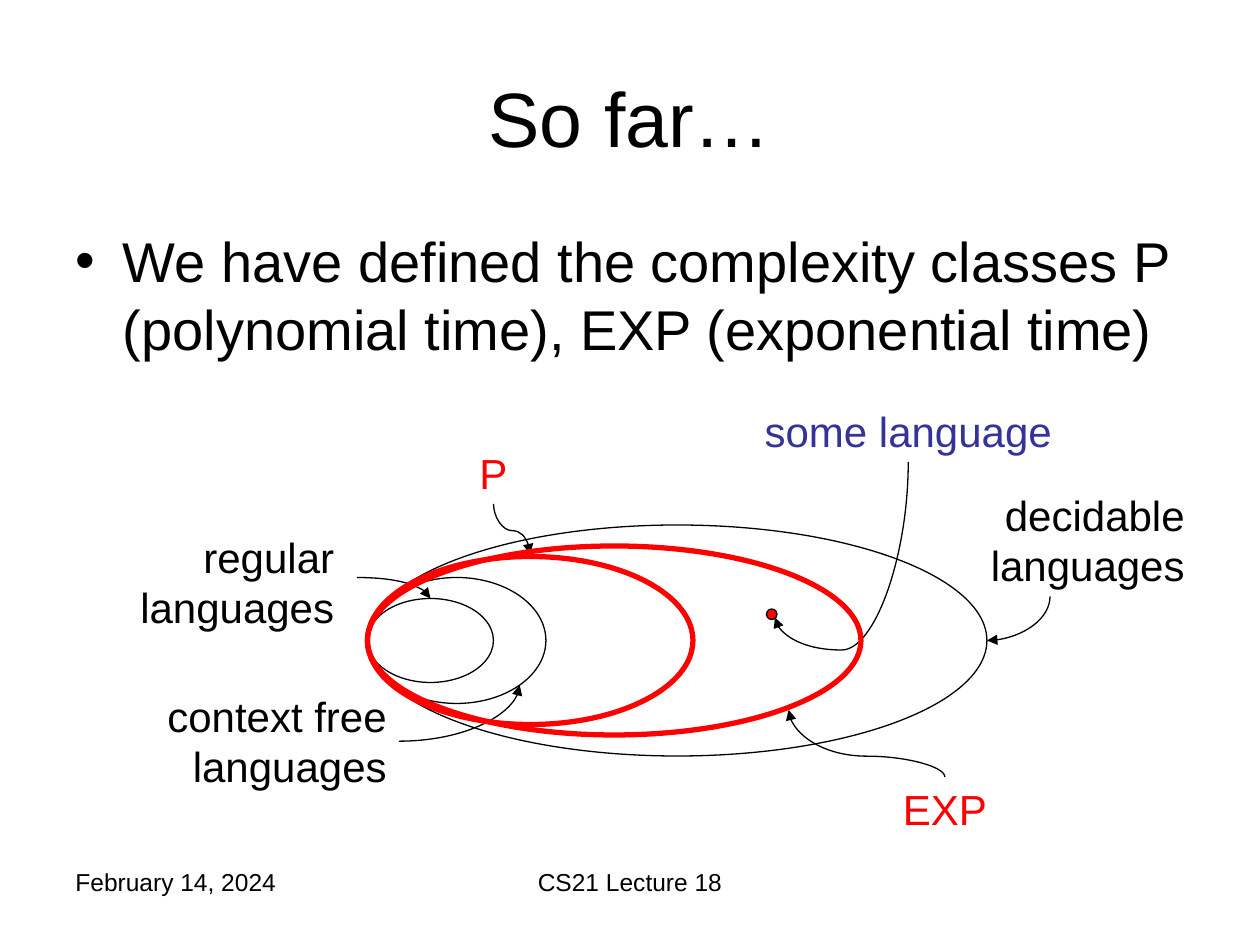
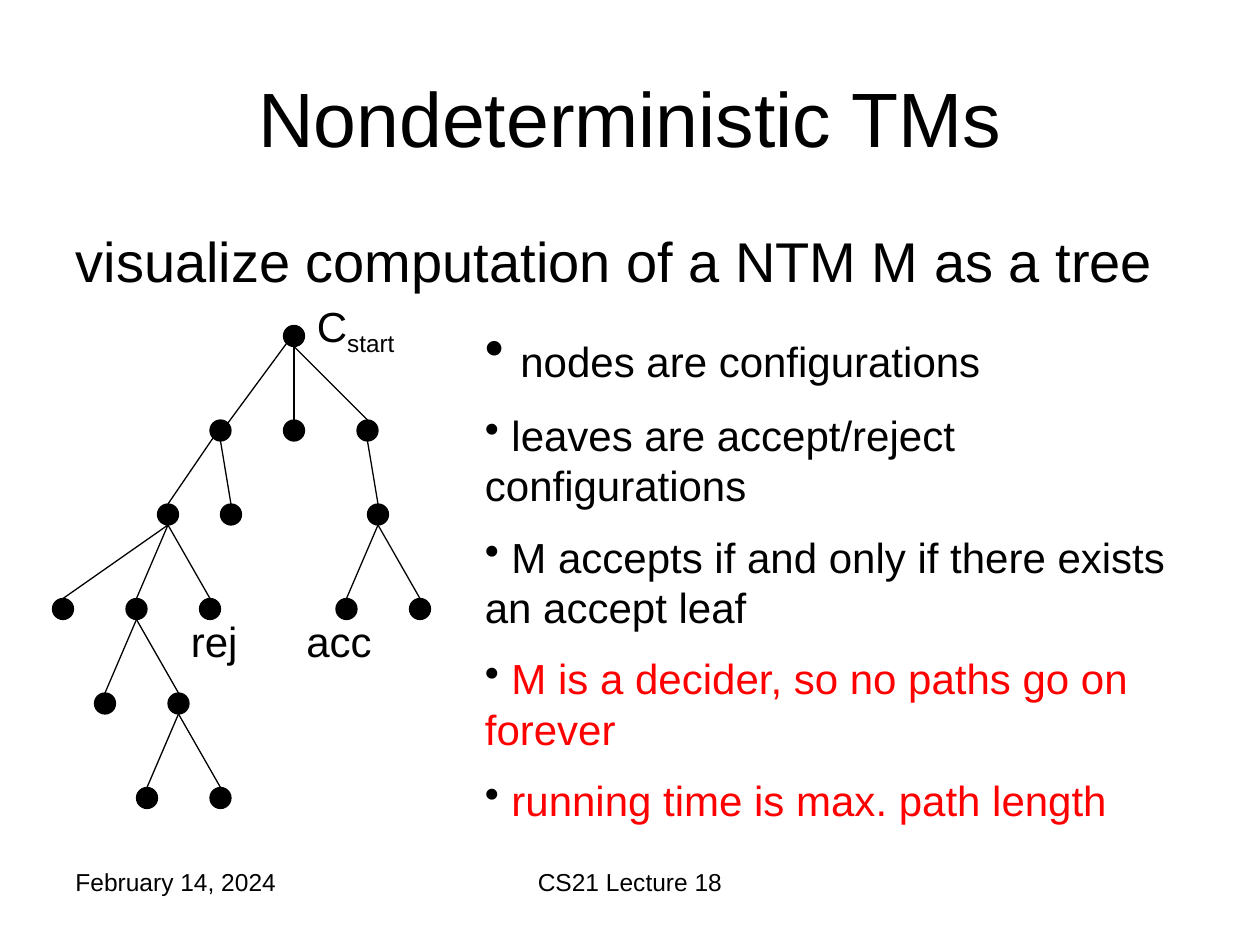
"""Build two lecture slides: language classes and nondeterministic machines."""
from dataclasses import dataclass
from math import cos, radians, sin

from lxml.etree import SubElement
from pptx import Presentation
from pptx.dml.color import RGBColor
from pptx.enum.shapes import MSO_CONNECTOR, MSO_SHAPE
from pptx.enum.text import MSO_ANCHOR, MSO_AUTO_SIZE, PP_ALIGN
from pptx.oxml.ns import qn
from pptx.util import Pt


@dataclass(frozen=True)
class Theme:
    font: str = "Arial"
    black: RGBColor = RGBColor(0, 0, 0)
    red: RGBColor = RGBColor(255, 0, 0)
    blue: RGBColor = RGBColor(0x33, 0x33, 0x99)
    title: int = 44
    body: int = 32
    label: int = 24
    foot: int = 14
    thin: float = 0.75
    thick: float = 3
    gap: int = 12


T = Theme()
LEFT, CENTER, RIGHT = PP_ALIGN.LEFT, PP_ALIGN.CENTER, PP_ALIGN.RIGHT

FOOTS = [
    ("February 14, 2024", (36, 492, 168, 37.4), LEFT),
    ("CS21 Lecture 18", (246, 492, 228, 37.4), CENTER),
]

SETS_X, SETS_Y = 210, 366
OUTER = [(354, 132), (102, 72), (72, 48)]
TIMED = [(282, 108), (186, 96)]
MEMBER = (441, 351)
LABELS = [
    ("regular languages", (66, 300, 132, 64.8), RIGHT, T.black),
    ("context free languages", (60, 391, 168, 64.8), RIGHT, T.black),
    ("decidable languages", (516, 276, 168, 64.8), RIGHT, T.black),
    ("P", (252, 252, 60, 36), CENTER, T.red),
    ("some language", (414, 228, 210, 36), CENTER, T.blue),
    ("EXP", (498, 444, 84, 36), CENTER, T.red),
]
ACROSS = [((204, 330), (246, 342)), ((228, 423.6), (297, 391.5))]
UPRIGHT = [
    ((600, 340.8), (564, 366), None),
    ((282, 288), (303, 316.8), 0.53),
    ((519, 264), (442.8, 352.8), 1.21),
    ((540, 444), (450.7, 405.6), 0.31),
]

LEVELS = [192, 246, 294, 348, 402, 456]
DOT = 12
NODES = {
    "start": (168, 0),
    "a": (126, 1), "b": (168, 1), "c": (210, 1),
    "aa": (96, 2), "ab": (132, 2), "ca": (216, 2),
    "aaa": (36, 3), "aab": (78, 3), "rej": (120, 3),
    "acc": (198, 3), "cab": (240, 3),
    "d": (60, 4), "e": (102, 4),
    "ea": (84, 5), "eb": (126, 5),
}
KIDS = {
    "start": ["a", "b", "c"], "a": ["aa", "ab"], "c": ["ca"],
    "aa": ["aaa", "aab", "rej"], "ca": ["acc", "cab"],
    "aab": ["d", "e"], "e": ["ea", "eb"],
}
ANGLES = {("start", "a"): (135, -45), ("a", "aa"): (135, -90)}
MARKS = [("acc", (168, 348, 90, 36)), ("rej", (102, 348, 90, 36))]
POINTS = [
    ("nodes are configurations", T.black),
    ("leaves are accept/reject configurations", T.black),
    ("M accepts if and only if there exists an accept leaf", T.black),
    ("M is a decider, so no paths go on forever", T.red),
    ("running time is max. path length", T.red),
]


def place(shape, box):
    shape.left, shape.top, shape.width, shape.height = map(Pt, box)


def style(font, size, color=T.black):
    font.name, font.size = T.font, Pt(size)
    font.color.rgb = color


def fill(shape, text, size):
    frame = shape.text_frame
    frame.text = text
    frame.auto_size = MSO_AUTO_SIZE.NONE
    style(frame.paragraphs[0].font, size)
    return frame


def write(slide, text, box, align=LEFT, color=T.black, size=T.label):
    frame = slide.shapes.add_textbox(*map(Pt, box)).text_frame
    frame.word_wrap = True
    para = frame.paragraphs[0]
    para.text, para.alignment = text, align
    style(para.font, size, color)
    return frame


def oval(slide, box, color=T.black, line=T.thin, inside=None):
    shape = slide.shapes.add_shape(MSO_SHAPE.OVAL, *map(Pt, box))
    shape.shadow.inherit = False
    shape.line.color.rgb, shape.line.width = color, Pt(line)
    if inside is None:
        shape.fill.background()
    else:
        shape.fill.solid()
        shape.fill.fore_color.rgb = inside


def disc(slide, x, y, size, color):
    oval(slide, (x - size / 2, y - size / 2, size, size), inside=color)


def link(slide, start, end, kind=MSO_CONNECTOR.STRAIGHT):
    line = slide.shapes.add_connector(kind, *map(Pt, (*start, *end)))
    line.line.color.rgb, line.line.width = T.black, Pt(T.thin)
    SubElement(line._element.spPr, qn("a:effectLst"))
    return line


def curve(slide, start, end, bend=None, turn=0):
    line = link(slide, start, end, MSO_CONNECTOR.CURVE)
    props = line._element.spPr
    if turn:
        props.find(qn("a:xfrm")).set("rot", str(turn * 60000))
    shape = props.find(qn("a:prstGeom"))
    if bend is None:
        shape.set("prst", "curvedConnector2")
    else:
        SubElement(shape.find(qn("a:avLst")), qn("a:gd"),
                   name="adj1", fmla=f"val {round(bend * 100000)}")
    SubElement(props.find(qn("a:ln")), qn("a:tailEnd"), type="triangle")


def drop(slide, start, end, bend):
    (x1, y1), (x2, y2) = start, end
    x, y = (x1 + x2) / 2, (y1 + y2) / 2
    wide, high = abs(y2 - y1) / 2, abs(x2 - x1) / 2
    if (x2 < x1) == (y2 < y1):
        wide = -wide
    turn = 90 if x2 < x1 else 270
    curve(slide, (x - wide, y - high), (x + wide, y + high), bend, turn)


def page(deck, title, body, high):
    slide = deck.slides.add_slide(deck.slide_layouts[1])
    head, main = slide.placeholders
    place(head, (36, 21.6, 648, 90))
    frame = fill(head, title, T.title)
    frame.vertical_anchor = MSO_ANCHOR.MIDDLE
    frame.paragraphs[0].alignment = CENTER
    place(main, (36, 126, 648, high))
    para = fill(main, body, T.body).paragraphs[0]
    for text, box, align in FOOTS:
        write(slide, text, box, align, size=T.foot)
    return slide, para


def classes(deck):
    slide, _ = page(deck, "So far…", "We have defined the complexity classes P "
                    "(polynomial time), EXP (exponential time)", 138)

    def nest(sizes, *look):
        for wide, high in sizes:
            oval(slide, (SETS_X, SETS_Y - high / 2, wide, high), *look)

    nest(OUTER)
    for label in LABELS:
        write(slide, *label)
    for start, end in ACROSS:
        curve(slide, start, end)
    disc(slide, *MEMBER, 6, T.red)
    for arrow in UPRIGHT:
        drop(slide, *arrow)
    nest(TIMED, T.red, T.thick)


def rim(name, angle):
    x, level = NODES[name]
    turn = radians(angle)
    return x + DOT / 2 * cos(turn), LEVELS[level] + DOT / 2 * sin(turn)


def tree(slide):
    for x, level in NODES.values():
        disc(slide, x, LEVELS[level], DOT, T.black)
    for top, kids in KIDS.items():
        for kid in kids:
            out, into = ANGLES.get((top, kid), (90, -90))
            link(slide, rim(top, out), rim(kid, into))
    for mark in MARKS:
        write(slide, *mark)
    para = write(slide, "C", (174, 168, 90, 36)).paragraphs[0]
    low = para.add_run()
    low.text = "start"
    low.font._element.set("baseline", "-25000")


def points(slide):
    frame = write(slide, "", (270, 180, 414, 304.6))
    for i, (text, color) in enumerate(POINTS):
        para = frame.add_paragraph() if i else frame.paragraphs[0]
        para.space_before = Pt(T.gap)
        SubElement(para._p.get_or_add_pPr(), qn("a:buChar"), char="•")
        space, words = para.add_run(), para.add_run()
        space.text, words.text = " ", text
        style(space.font, T.label if i else T.body)
        style(words.font, T.label, color)


def machines(deck):
    slide, para = page(deck, "Nondeterministic TMs",
                       "visualize computation of a NTM M as a tree", 48)
    props = para._p.get_or_add_pPr()
    props.insert(0, props.makeelement(qn("a:buNone")))
    tree(slide)
    points(slide)


def main():
    deck = Presentation()
    deck.slide_width, deck.slide_height = Pt(720), Pt(540)
    classes(deck)
    machines(deck)
    deck.save("out.pptx")


if __name__ == "__main__":
    main()
